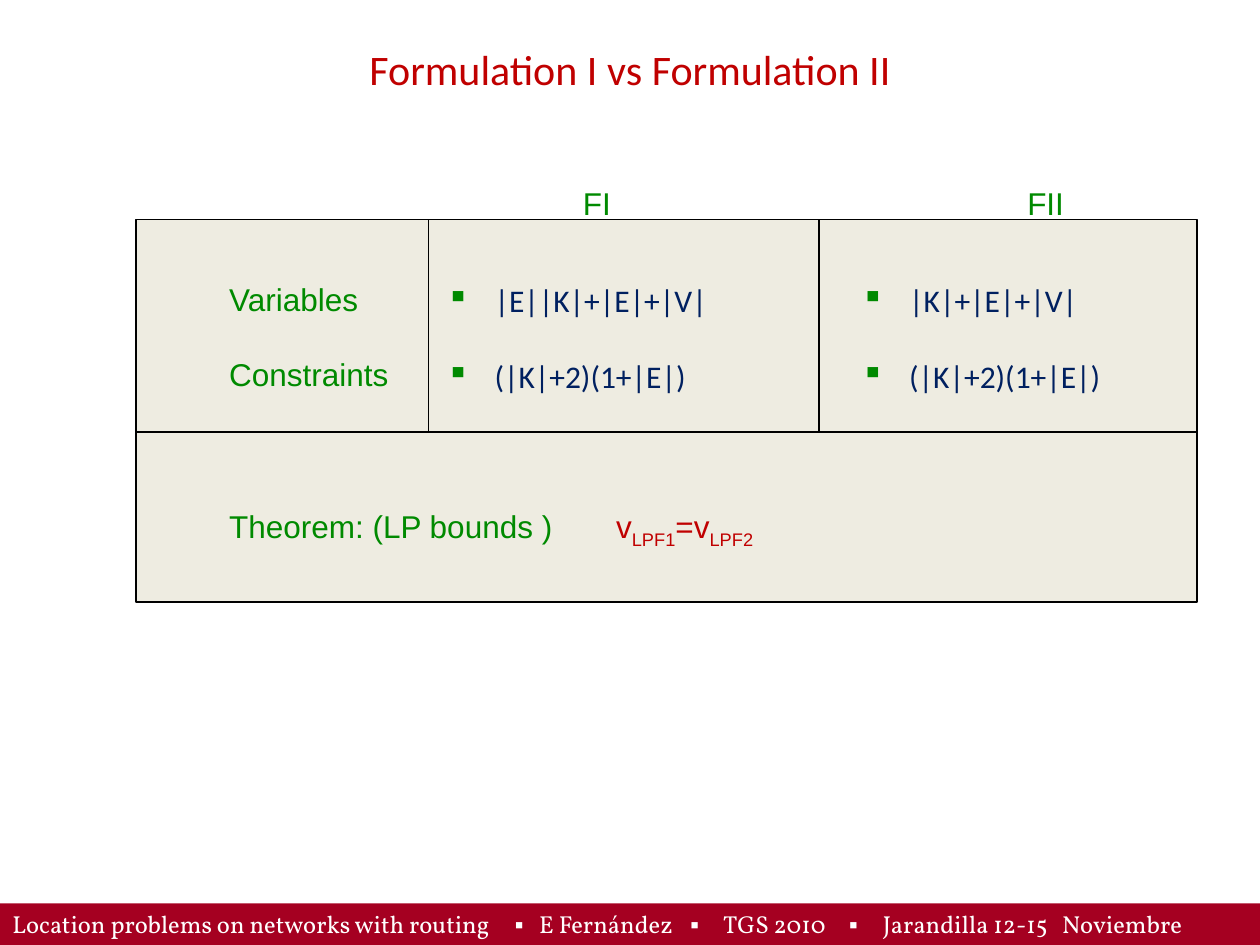
from lxml import etree
from pptx import Presentation
from pptx.dml.color import RGBColor
from pptx.enum import shapes, text
from pptx.oxml.ns import qn
from pptx.util import Cm, Pt

HUES = {"white": "FFFFFF", "wine": "A50021", "red": "C00000", "green": "008A00",
        "navy": "002060", "sand": "EEECE1", "black": "000000"}
TITLE = "Formulation I vs Formulation II"
FOOT = [("Location problems on networks with routing\t", "Vollkorn"), ("▪", "Calibri"),
        ("\tE Fernández\t", "Vollkorn"), ("▪", "Calibri"),
        ("\tTGS 2010\t", "Vollkorn"), ("▪", "Calibri"),
        ("\tJarandilla 12-15\tNoviembre", "Vollkorn")]
HEADS = "FI\tFII"
LABELS = ["Variables", "Constraints"]
BOUND = [("Theorem: (LP bounds )\t", "green", 0), ("v", "red", 0), ("LPF1", "red", -25000),
         ("=v", "red", 0), ("LPF2", "red", -25000)]
SIZES = [(8.15, ["|E||K|+|E|+|V|", "(|K|+2)(1+|E|)"]),
         (16.51, ["|K|+|E|+|V|", "(|K|+2)(1+|E|)"])]
LEFT, TOP, RIGHT, BASE = 2.74, 4.42, 24.13, 12.14
MID, COLS = 8.71, (8.64, 16.51)


def tint(hue):
    return RGBColor.from_string(HUES[hue])


def style(run, font, size, hue):
    for key, val in {"name": font, "size": Pt(size)}.items():
        setattr(run.font, key, val)
    run.font.color.rgb = tint(hue)


def write(para, words, font, size, hue, shift=0):
    run = para.add_run()
    run.text = words
    style(run, font, size, hue)
    if shift:
        run.font._element.set("baseline", str(shift))


def stops(para, spots):
    tabs = etree.SubElement(para._p.get_or_add_pPr(), qn("a:tabLst"))
    for spot in spots:
        etree.SubElement(tabs, qn("a:tab"), pos=str(int(Cm(spot))), algn="l")


def bullet(para):
    props = para._p.get_or_add_pPr()
    props.set("marL", str(int(Cm(1.57))))
    props.set("indent", str(int(Cm(-0.97))))
    color = etree.SubElement(props, qn("a:buClr"))
    etree.SubElement(color, qn("a:srgbClr"), val=HUES["green"])
    etree.SubElement(props, qn("a:buChar"), char="▪")


def block(slide, x, y, w, h):
    frame = slide.shapes.add_textbox(Cm(x), Cm(y), Cm(w), Cm(h)).text_frame
    frame.word_wrap = True
    return frame


def rows(frame, count, gaps):
    paras = [frame.paragraphs[0]] + [frame.add_paragraph() for _ in range(count - 1)]
    for para, gap in zip(paras[1:], gaps):
        para.space_before = Pt(gap)
    return paras


def panel(slide, x, y, w, h, hue):
    box = slide.shapes.add_shape(shapes.MSO_SHAPE.RECTANGLE, Cm(x), Cm(y), Cm(w), Cm(h))
    box.shadow.inherit = False
    box.fill.solid()
    box.fill.fore_color.rgb = tint(hue)
    return box


def edge(line):
    line.color.rgb = tint("black")
    line.width = Pt(0.75)


def rule(slide, *ends):
    link = slide.shapes.add_connector(shapes.MSO_CONNECTOR.STRAIGHT, *map(Cm, ends))
    edge(link.line)
    etree.SubElement(link._element.spPr, qn("a:effectLst"))


def main():
    deck = Presentation()
    deck.slide_width, deck.slide_height = Cm(25.4), Cm(19.05)
    slide = deck.slides.add_slide(deck.slide_layouts[5])

    bar = panel(slide, 0, 18.21, 25.4, 0.84, "wine")
    bar.line.fill.background()
    bar.text_frame.vertical_anchor = text.MSO_ANCHOR.TOP
    para = bar.text_frame.paragraphs[0]
    para.alignment = text.PP_ALIGN.LEFT
    stops(para, [10.13, 10.62, 13.67, 14.33, 16.87, 17.55, 21.16])
    for words, font in FOOT:
        write(para, words, font, 14, "white")

    edge(panel(slide, LEFT, TOP, RIGHT - LEFT, BASE - TOP, "sand").line)

    title = slide.shapes.title
    place = {"left": 1.27, "top": 0.64, "width": 22.86, "height": 1.47}
    for key, val in place.items():
        setattr(title, key, Cm(val))
    title.text_frame.vertical_anchor = text.MSO_ANCHOR.MIDDLE
    para = title.text_frame.paragraphs[0]
    para.alignment = text.PP_ALIGN.CENTER
    write(para, TITLE, "Calibri", 24, "red")

    for x, items in SIZES:
        frame = block(slide, x, 5.54, 7.5, 2.54)
        for para, words in zip(rows(frame, len(items), [22]), items):
            bullet(para)
            write(para, words, "Calibri", 18, "navy")

    paras = rows(block(slide, 4.37, 5.13, 19.25, 5.99), 3, [10.5, 53])
    for para in paras:
        para.line_spacing = 1.5
    for para, words in zip(paras, LABELS):
        write(para, words, "Arial", 18, "green")
    stops(paras[-1], [7.8])
    for words, hue, shift in BOUND:
        write(paras[-1], words, "Arial", 18, hue, shift)

    rule(slide, LEFT, MID, RIGHT, MID)
    for x in COLS:
        rule(slide, x, TOP, x, MID)

    para = block(slide, 9.6, 3.58, 13.26, 1.02).paragraphs[0]
    para._p.get_or_add_pPr().set("marL", str(int(Cm(1.9))))
    stops(para, [10.15])
    write(para, HEADS, "Arial", 18, "green")

    deck.save("out.pptx")


if __name__ == "__main__":
    main()
